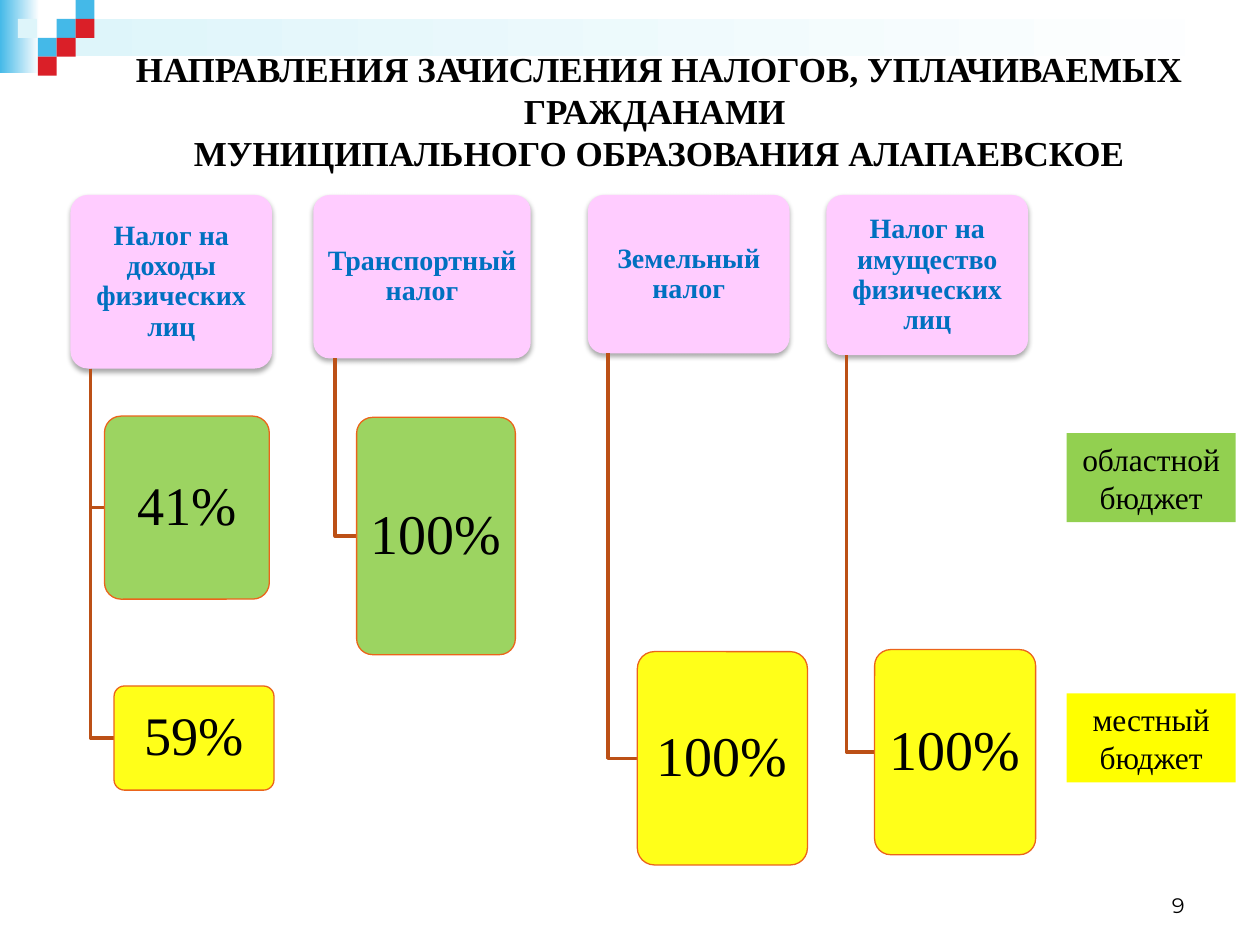
"""Build the slide on where taxes paid by citizens are credited."""
from lxml import etree
from pptx import Presentation
from pptx.dml.color import RGBColor
from pptx.enum import shapes, text
from pptx.oxml import ns
from pptx.util import Pt

SERIF = "Times New Roman"
PINK, GREEN, YELLOW = "FFCCFF", "92D050", "FFFF00"
BLUE, RED, PALE = "44B9E8", "DA1F28", "DEF5FA"
RECT, ROUND = shapes.MSO_SHAPE.RECTANGLE, shapes.MSO_SHAPE.ROUNDED_RECTANGLE
CENTER, RIGHT = text.PP_ALIGN.CENTER, text.PP_ALIGN.RIGHT
MIDDLE, BOTTOM = text.MSO_ANCHOR.MIDDLE, text.MSO_ANCHOR.BOTTOM

TITLE = ["НАПРАВЛЕНИЯ ЗАЧИСЛЕНИЯ НАЛОГОВ, УПЛАЧИВАЕМЫХ ГРАЖДАНАМИ ",
         "МУНИЦИПАЛЬНОГО ОБРАЗОВАНИЯ АЛАПАЕВСКОЕ"]
BANDS = [((0, 0, 22.5, 41.8), BLUE), ((32.4, 10.8, 687.6, 21.4), PALE)]
TILE = 10.8
TILES = [(3, 1, BLUE), (4, 0, BLUE), (4, 1, RED), (2, 2, BLUE),
         (0.95, 1, PALE), (3, 2, RED), (2, 3, RED)]
HEADER_TOP = 111.4
TAXES = [
    ("Налог на доходы физических лиц", 40.3, 115.2, 99.2,
     [("41%", 31, GREEN, (59.7, 237.8, 94.2, 104.6)),
      ("59%", 31, YELLOW, (65.2, 392, 91.4, 59.5))]),
    ("Транспортный налог", 179.1, 124.2, 93.4,
     [("100%", 32, GREEN, (203.8, 238.5, 90.7, 135.6))]),
    ("Земельный налог", 336, 115.2, 90.6,
     [("100%", 32, YELLOW, (364.2, 372.4, 97.2, 121.9))]),
    ("Налог на имущество физических лиц", 472.3, 115.2, 91.6,
     [("100%", 32, YELLOW, (499.8, 371.2, 92, 117.2))]),
]
LEGEND = [("областной бюджет", GREEN, 247.5), ("местный бюджет", YELLOW, 396.2)]


def color(value):
    return RGBColor.from_string(value)


def add_box(page, kind, place, fill, line=None):
    box = page.shapes.add_shape(kind, *map(Pt, place))
    box.shadow.inherit = False
    if kind == ROUND:
        box.adjustments[0] = 0.1
    box.fill.solid()
    box.fill.fore_color.rgb = color(fill)
    if line:
        box.line.color.rgb = color(line)
        box.line.width = Pt(0.75)
    else:
        box.line.fill.background()
    return box


def write(box, lines, size, fill="000000", bold=False, font=SERIF, align=CENTER,
          anchor=MIDDLE, insets=(7.2, 3.6), spacing=1.0):
    frame = box.text_frame
    frame.word_wrap = True
    frame.vertical_anchor = anchor
    frame.margin_left = frame.margin_right = Pt(insets[0])
    frame.margin_top = frame.margin_bottom = Pt(insets[1])
    para = frame.paragraphs[0]
    para.alignment = align
    para.line_spacing = spacing
    for index, line in enumerate(lines):
        if index:
            para.add_line_break()
        span = para.add_run()
        span.text = line
        span.font.name, span.font.size, span.font.bold = font, Pt(size), bold
        span.font.color.rgb = color(fill)


def add_gradient(box, start):
    box.fill.gradient()
    box.fill.gradient_angle = 0
    for stop, value in zip(box.fill.gradient_stops, (start, "FFFFFF")):
        stop.color.rgb = color(value)


def set_alpha(parent, percent):
    etree.SubElement(parent, ns.qn("a:alpha"), val=str(percent * 1000))


def add_shadow(box):
    effects = box._element.spPr.find(ns.qn("a:effectLst"))
    shadow = etree.SubElement(effects, ns.qn("a:outerShdw"), blurRad=str(Pt(3.1)),
                              dist=str(Pt(1.8)), dir="5400000", rotWithShape="0")
    set_alpha(etree.SubElement(shadow, ns.qn("a:srgbClr"), val="000000"), 35)


def add_elbow(page, x, top, right, bottom):
    builder = page.shapes.build_freeform(Pt(x), Pt(top))
    builder.add_line_segments([(Pt(x), Pt(bottom)), (Pt(right), Pt(bottom))], close=False)
    elbow = builder.convert_to_shape()
    elbow.shadow.inherit = False
    elbow.fill.background()
    elbow.line.color.rgb = color("BC5016")
    elbow.line.width = Pt(2)


def add_tax(page, name, left, width, height, shares):
    header = add_box(page, ROUND, (left, HEADER_TOP, width, height), PINK)
    add_shadow(header)
    write(header, [name], 16, "0070C0", True, insets=(2.2, 1.4), spacing=0.9)
    for label, size, fill, place in shares:
        x, top, _, tall = place
        add_elbow(page, left + width / 10, HEADER_TOP + height, x, top + tall / 2)
        share = add_box(page, ROUND, place, fill, "EB641B")
        set_alpha(share._element.spPr.find(ns.qn("a:solidFill"))[0], 90)
        write(share, [label], size, insets=(4.7, 2.9), spacing=0.9)


def main():
    deck = Presentation()
    deck.slide_width, deck.slide_height = Pt(720), Pt(540)
    page = deck.slides.add_slide(deck.slide_layouts[6])
    for place, start in BANDS:
        add_gradient(add_box(page, RECT, place, start), start)
    for column, row, fill in TILES:
        add_box(page, RECT, (column * TILE, row * TILE, TILE, TILE), fill)
    title = page.shapes.add_textbox(Pt(70.6), Pt(9.4), Pt(612), Pt(108))
    write(title, TITLE, 20, bold=True)
    for tax in TAXES:
        add_tax(page, *tax)
    for label, fill, top in LEGEND:
        write(add_box(page, RECT, (609.6, top, 96.5, 50.9), fill), [label], 18)
    number = page.shapes.add_textbox(Pt(516), Pt(491.8), Pt(168), Pt(36))
    write(number, ["9"], 12, font="Montserrat", align=RIGHT, anchor=BOTTOM)
    deck.save("out.pptx")


if __name__ == "__main__":
    main()
